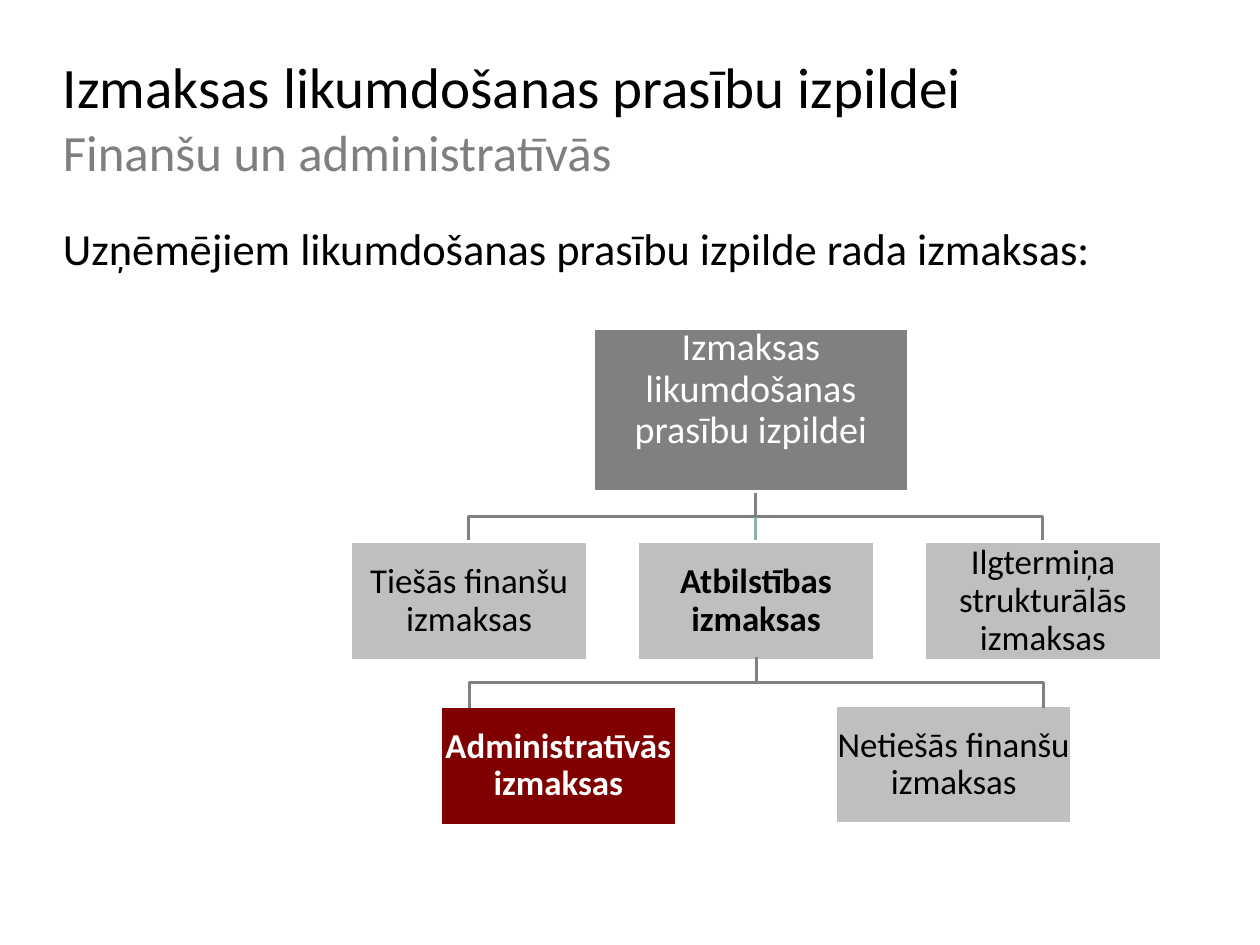
from lxml import etree
from pptx import Presentation
from pptx.dml.color import RGBColor
from pptx.enum.shapes import MSO_CONNECTOR, MSO_SHAPE
from pptx.enum.text import MSO_ANCHOR, MSO_AUTO_SIZE, PP_ALIGN
from pptx.oxml.ns import qn
from pptx.util import Emu, Pt

EMU_PER_PX = 9144
SLIDE_WIDTH, SLIDE_HEIGHT = Emu(10080625), Emu(7559675)
RECTANGLE = MSO_SHAPE.RECTANGLE
STRAIGHT = MSO_CONNECTOR.STRAIGHT
TOP, MIDDLE = MSO_ANCHOR.TOP, MSO_ANCHOR.MIDDLE
LEFT, CENTER = PP_ALIGN.LEFT, PP_ALIGN.CENTER
NO_AUTOFIT = MSO_AUTO_SIZE.NONE

BLACK, WHITE = "000000", "FFFFFF"
GRAY, LIGHT_GRAY, SUBTITLE_GRAY = "808080", "BFBFBF", "7F7F7F"
GREEN, DARK_RED = "88B5A2", "800000"


def px(length):
    return round(length * EMU_PER_PX)


def color(value):
    return RGBColor.from_string(value)


def format_run(run, size, fill=BLACK, bold=False, name="Calibri"):
    run.font.name = name
    run.font.size = Pt(size)
    run.font.bold = bold
    run.font.color.rgb = color(fill)


def write(shape, lines, align=LEFT, anchor=MIDDLE, margin=0, spacing=1.0,
          after=0, hanging=0):
    frame = shape.text_frame
    frame.word_wrap = True
    frame.auto_size = NO_AUTOFIT
    frame.vertical_anchor = anchor
    frame.margin_left = frame.margin_right = px(margin)
    frame.margin_top = frame.margin_bottom = px(margin)
    paragraph = frame.paragraphs[0]
    paragraph.alignment = align
    paragraph.line_spacing = spacing
    paragraph.space_before = Pt(0)
    paragraph.space_after = Pt(after)
    properties = paragraph._p.get_or_add_pPr()
    properties.set("marL", str(px(hanging)))
    properties.set("indent", str(-px(hanging)))
    etree.SubElement(properties, qn("a:buNone"))
    for index, (text, style) in enumerate(lines):
        if index:
            paragraph.add_line_break()
        run = paragraph.add_run()
        run.text = text
        format_run(run, **style)


class CostSlide:
    """Draw the parts of the cost chart on one slide in a shared style."""

    def __init__(self, slide, line_width=2):
        self.slide = slide
        self.line_width = Pt(line_width)

    def outline(self, shape, line_color):
        shape.line.color.rgb = color(line_color)
        shape.line.width = self.line_width

    def placeholder(self, index, left, top, width, height, lines, **layout):
        shape = self.slide.placeholders[index]
        shape.left, shape.top = px(left), px(top)
        shape.width, shape.height = px(width), px(height)
        write(shape, lines, spacing=1.01, **layout)

    def box(self, left, top, width, height, text, fill=LIGHT_GRAY, size=22,
            text_color=BLACK, bold=False, anchor=MIDDLE, margin=2):
        shape = self.slide.shapes.add_shape(
            RECTANGLE, px(left), px(top), px(width), px(height))
        shape.shadow.inherit = False
        shape.fill.solid()
        shape.fill.fore_color.rgb = color(fill)
        self.outline(shape, WHITE)
        style = dict(size=size, fill=text_color, bold=bold)
        write(shape, [(text, style)], align=CENTER, anchor=anchor,
              margin=margin, spacing=0.9)

    def branch(self, start_x, top, end_x, height=44):
        middle, bottom = top + height // 2, top + height
        builder = self.slide.shapes.build_freeform(start_x, top, scale=EMU_PER_PX)
        builder.add_line_segments(
            [(start_x, middle), (end_x, middle), (end_x, bottom)], close=False)
        shape = builder.convert_to_shape()
        shape.shadow.inherit = False
        shape.fill.background()
        self.outline(shape, GRAY)

    def stem(self, x, top, height=44):
        connector = self.slide.shapes.add_connector(
            STRAIGHT, px(x), px(top), px(x), px(top + height))
        self.outline(connector, GREEN)
        etree.SubElement(connector._element.spPr, qn("a:effectLst"))


def main():
    presentation = Presentation()
    presentation.slide_width = SLIDE_WIDTH
    presentation.slide_height = SLIDE_HEIGHT
    slide = presentation.slides.add_slide(presentation.slide_layouts[1])
    chart = CostSlide(slide)

    chart.placeholder(0, 55, 33, 992, 138, [
        ("Izmaksas likumdošanas prasību izpildei", dict(size=36)),
        ("Finanšu un administratīvās", dict(size=32, fill=SUBTITLE_GRAY)),
    ])
    chart.placeholder(1, 55, 193, 992, 545, [
        ("Uzņēmējiem likumdošanas prasību izpilde rada izmaksas:", dict(size=28)),
    ], anchor=TOP, after=14.2, hanging=37)

    step, center = 251, 661
    chart.branch(center, 430, center + step)
    chart.stem(center, 430)
    chart.branch(center, 430, center - step)

    chart.box(519, 287, 276, 143, "Izmaksas likumdošanas prasību izpildei",
              fill=GRAY, size=24, text_color=WHITE, anchor=TOP, margin=0)
    costs = [("Tiešās finanšu izmaksas", False),
             ("Atbilstības izmaksas", True),
             ("Ilgtermiņa strukturālās izmaksas", False)]
    for column, (text, bold) in enumerate(costs):
        chart.box(307 + column * step, 474, 207, 104, text, bold=bold)
    chart.box(731, 617, 207, 104, "Netiešās finanšu izmaksas")
    chart.box(385, 618, 207, 104, "Administratīvās izmaksas",
              fill=DARK_RED, text_color=WHITE, bold=True)

    for offset in (-step, step):
        chart.branch(center + 1, 575, center + 1 + offset)

    presentation.save("out.pptx")


if __name__ == "__main__":
    main()
